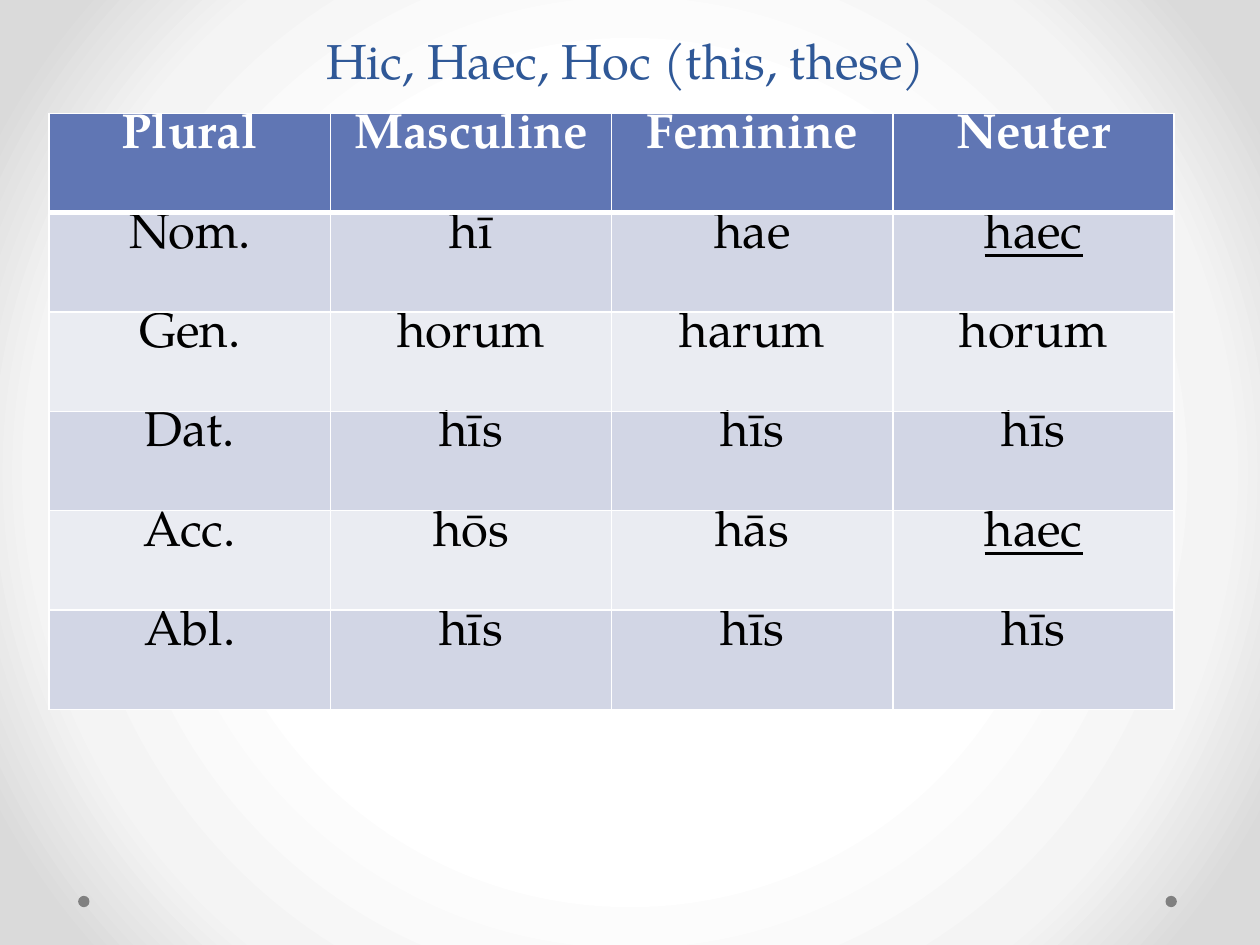
from lxml import etree
from pptx import Presentation
from pptx.dml.color import RGBColor
from pptx.enum.shapes import MSO_SHAPE
from pptx.enum.text import MSO_ANCHOR, PP_ALIGN
from pptx.oxml import parse_xml
from pptx.oxml.ns import nsdecls, qn
from pptx.util import Inches, Pt

OVAL = MSO_SHAPE.OVAL
CENTER = PP_ALIGN.CENTER
TOP, BOTTOM = MSO_ANCHOR.TOP, MSO_ANCHOR.BOTTOM
FONT = "TeX Gyre Pagella"
COLORS = {
    "title": "2F5897", "head": "6076B4", "odd": "D2D6E5", "even": "EAECF2",
    "white": "FFFFFF", "pale": "F4F4F4", "gray": "DADADA",
    "dot": "808080", "ink": "000000",
}
FORMS = [
    ["Plural", "Masculine", "Feminine", "Neuter"],
    ["Nom.", "hī", "hae", "haec"],
    ["Gen.", "horum", "harum", "horum"],
    ["Dat.", "hīs", "hīs", "hīs"],
    ["Acc.", "hōs", "hās", "haec"],
    ["Abl.", "hīs", "hīs", "hīs"],
]


def color(name):
    """Return the named color."""
    return RGBColor.from_string(COLORS[name])


def write(frame, text, tint, bold=False, under=False):
    """Write one centered run into a text frame."""
    para = frame.paragraphs[0]
    para.alignment = CENTER
    run = para.add_run()
    run.text = text
    font = run.font
    font.name, font.size = FONT, Pt(28)
    font.bold, font.underline = bold, under
    font.color.rgb = color(tint)


def add_back(slide):
    """Fill the background with a round gradient."""
    slide.background.fill.gradient()
    grad = slide.element.find(".//" + qn("a:gradFill"))
    stops = "".join(
        f'<a:gs pos="{pos}000"><a:srgbClr val="{COLORS[name]}"/></a:gs>'
        for pos, name in ((50, "white"), (76, "pale"), (92, "gray"))
    )
    fresh = parse_xml(
        f'<a:gradFill {nsdecls("a")} rotWithShape="1"><a:gsLst>{stops}</a:gsLst>'
        '<a:path path="circle"><a:fillToRect l="50000" t="50000" '
        'r="50000" b="50000"/></a:path></a:gradFill>'
    )
    grad.getparent().replace(grad, fresh)


def add_dot(slide, box):
    """Draw one small footer dot."""
    dot = slide.shapes.add_shape(OVAL, *map(Inches, box))
    dot.shadow.inherit = False
    dot.fill.solid()
    dot.fill.fore_color.rgb = color("dot")
    dot.line.fill.background()


def add_title(slide, box):
    """Place and format the title."""
    title = slide.shapes.title
    title.left, title.top, title.width, title.height = map(Inches, box)
    frame = title.text_frame
    frame.word_wrap = True
    frame.vertical_anchor = BOTTOM
    write(frame, "Hic, Haec, Hoc (this, these)", "title")


def add_edges(cell, sides):
    """Draw white cell borders with the given widths in points."""
    props = cell._tc.get_or_add_tcPr()
    for spot, (side, width) in enumerate(sides.items()):
        line = etree.Element(qn(f"a:{side}"), w=str(Pt(width)))
        fill = etree.SubElement(line, qn("a:solidFill"))
        etree.SubElement(fill, qn("a:srgbClr"), val=COLORS["white"])
        props.insert(spot, line)


def add_forms(slide, box):
    """Build the table of plural forms."""
    count, width = len(FORMS), len(FORMS[0])
    table = slide.shapes.add_table(count, width, *map(Inches, box)).table
    for r, words in enumerate(FORMS):
        head = r == 0
        shade = "head" if head else "odd" if r % 2 else "even"
        for c, word in enumerate(words):
            cell = table.cell(r, c)
            cell.fill.solid()
            cell.fill.fore_color.rgb = color(shade)
            cell.vertical_anchor = TOP
            cell.margin_top = cell.margin_bottom = 0
            write(cell.text_frame, word, "white" if head else "ink",
                  head, word == "haec")
            add_edges(cell, {"lnL": 1, "lnR": 1, "lnT": 3 if r == 1 else 1,
                             "lnB": 3 if head else 1})


def main():
    """Build and save the slide."""
    deck = Presentation()
    deck.slide_width, deck.slide_height = Inches(10), Inches(7.5)
    slide = deck.slides.add_slide(deck.slide_layouts[5])
    add_back(slide)
    for left in (9.25, 0.62):
        add_dot(slide, (left, 7.11, 0.09, 0.09))
    add_title(slide, (1.84, -0.22, 6.25, 0.98))
    add_forms(slide, (0.39, 0.9, 8.93, 4.73))
    deck.save("out.pptx")


if __name__ == "__main__":
    main()
